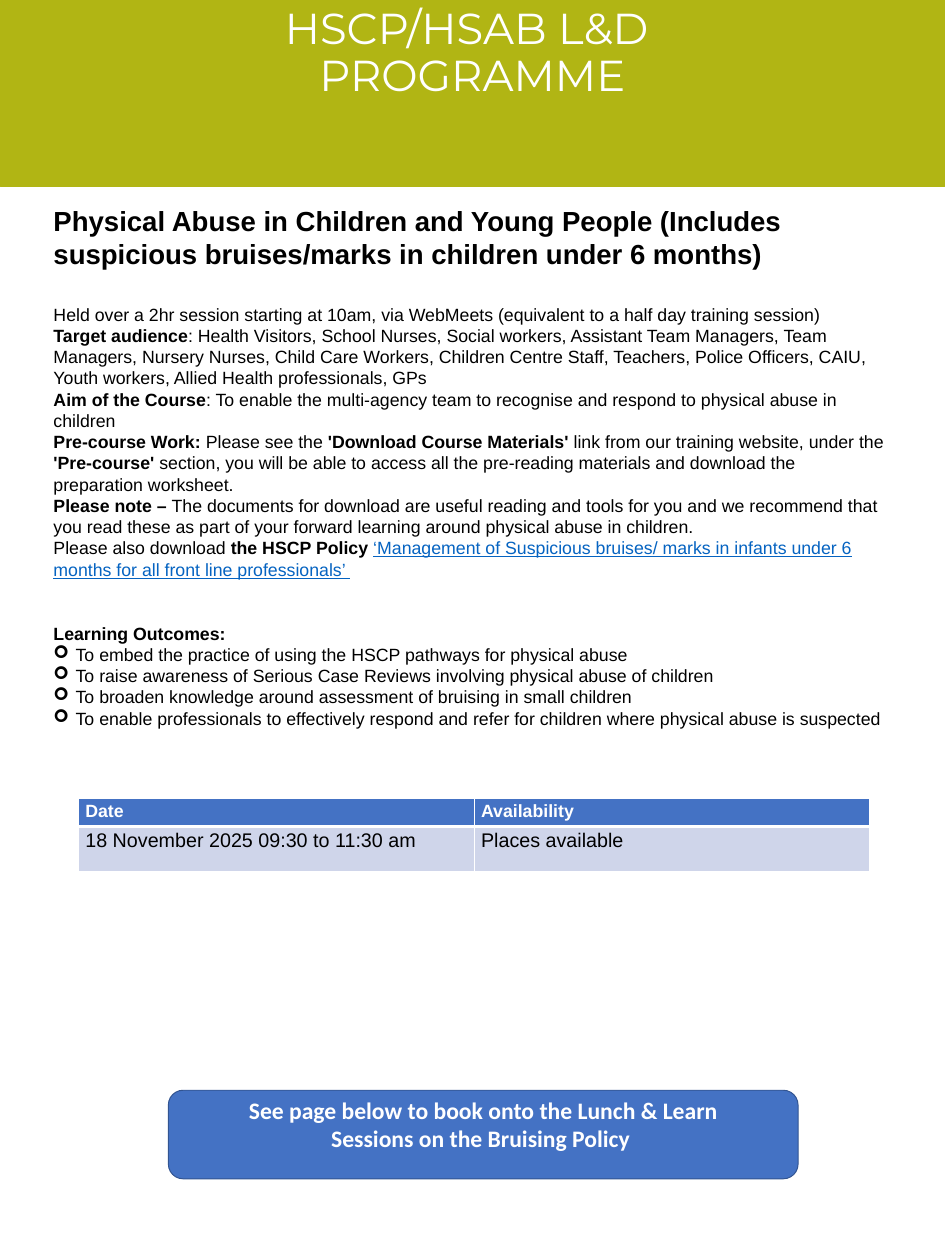
from pptx import Presentation
from pptx.util import Pt
from pptx.dml.color import RGBColor
from pptx.enum.shapes import MSO_SHAPE as Shape
from pptx.enum.text import MSO_ANCHOR as Anchor, PP_ALIGN as Align
from pptx.oxml.ns import qn
from lxml.etree import SubElement as Sub

PX = 9525
THEME = {
    "lime": "B1B514", "blue": "4472C4", "edge": "325491", "pale": "CFD5EA",
    "link": "0563C1", "white": "FFFFFF", "black": "000000",
    "title": 44, "head": 28, "call": 24, "cell": 20, "text": 18,
}
LEAD = 1.2  # line pitch of the body text, in type sizes

TITLE = "HSCP/HSAB L&D \vPROGRAMME"
HEAD = ("Physical Abuse in Children and Young People (Includes suspicious "
        "bruises/marks in children under 6 months)")
# Each paragraph is a list of (style, words): n normal, b bold, u link
BODY = [
    [("n", "Held over a 2hr session starting at 10am, via WebMeets "
           "(equivalent to a half day training session)")],
    [("b", "Target audience"),
     ("n", ": Health Visitors, School Nurses, Social workers, Assistant Team "
           "Managers, Team Managers, Nursery Nurses, Child Care Workers, "
           "Children Centre Staff, Teachers, Police Officers, CAIU, Youth "
           "workers, Allied Health professionals, GPs")],
    [("b", "Aim of the Course"),
     ("n", ": To enable the multi-agency team to recognise and respond to "
           "physical abuse in children")],
    [("b", "Pre-course Work: "), ("n", "Please see the "),
     ("b", "'Download Course Materials'"),
     ("n", " link from our training website, under the "),
     ("b", "'Pre-course'"),
     ("n", " section, you will be able to access all the pre-reading "
           "materials and download the preparation worksheet.")],
    [("b", "Please note – "),
     ("n", "The documents for download are useful reading and tools for you "
           "and we recommend that you read these as part of your forward "
           "learning around physical abuse in children.")],
    [("n", "Please also download "), ("b", "the HSCP Policy "),
     ("u", "‘Management of Suspicious bruises/ marks in infants under 6 "
           "months for all front line professionals’ ")],
]
GOALS = [
    "To embed the practice of using the HSCP pathways for physical abuse",
    "To raise awareness of Serious Case Reviews involving physical abuse of children",
    "To broaden knowledge around assessment of bruising in small children",
    "To enable professionals to effectively respond and refer for children "
    "where physical abuse is suspected",
]
DATES = [("Date", "Availability"),
         ("18 November 2025 09:30 to 11:30 am", "Places available")]
CALL = ["See page below to book onto the Lunch & Learn",
        "Sessions on the Bruising Policy "]


def emu(box):
    return [n * PX for n in box]


def tint(name):
    return RGBColor.from_string(THEME[name])


def style(font, size, color="black", face="Arial", **more):
    look = {"size": Pt(THEME[size]), "name": face, "bold": False, **more}
    for key, value in look.items():
        setattr(font, key, value)
    font.color.rgb = tint(color)


def panel(slide, box, kind, fill, edge):
    shape = slide.shapes.add_shape(kind, *emu(box))
    shape.shadow.inherit = False
    shape.fill.solid()
    shape.fill.fore_color.rgb = tint(fill)
    shape.line.color.rgb = tint(edge)
    shape.line.width = Pt(1)
    return shape


def textbox(slide, box):
    frame = slide.shapes.add_textbox(*emu(box)).text_frame
    frame.word_wrap = True
    return frame


def banner(slide, box):
    x, y, w, h = box
    panel(slide, box, Shape.RECTANGLE, "lime", "lime")
    par = textbox(slide, (x, y + 5, w, h - 36)).paragraphs[0]
    par.text = TITLE
    par.alignment = Align.CENTER
    par.line_spacing = 0.9
    style(par.font, "title", "white", "Montserrat")


def write(par, parts, size="text", gap=0):
    """Fill a paragraph with styled parts; gap is points above it."""
    par.line_spacing = Pt(THEME[size] * LEAD)
    par.space_before = Pt(gap)
    for mark, words in parts:
        run = par.add_run()
        run.text = words
        style(run.font, size, "link" if mark == "u" else "black",
              bold=mark == "b", underline=mark == "u")


def bullet(par):
    props = par._p.get_or_add_pPr()
    props.set("marL", str(30 * PX))
    props.set("indent", str(-30 * PX))
    Sub(props, qn("a:buFont"), typeface="Wingdings")
    Sub(props, qn("a:buChar"), char="➢")


def course(slide, box):
    frame = textbox(slide, box)
    write(frame.paragraphs[0], [("b", HEAD)], "head")
    for i, parts in enumerate(BODY):
        gap = 0 if i else THEME["head"] * LEAD
        write(frame.add_paragraph(), parts, gap=gap)
    write(frame.add_paragraph(), [("b", "Learning Outcomes:")],
          gap=2 * THEME["text"] * LEAD)
    for goal in GOALS:
        par = frame.add_paragraph()
        write(par, [("n", goal)])
        bullet(par)


def border(cell, low):
    """Draw white cell edges, the lower one low points wide."""
    props = cell._tc.get_or_add_tcPr()
    for side, width in zip("LRTB", (1, 1, 1, low)):
        line = Sub(props, qn("a:ln" + side), w=str(Pt(width)))
        Sub(Sub(line, qn("a:solidFill")), qn("a:srgbClr"), val=THEME["white"])


def dates(slide, box):
    table = slide.shapes.add_table(len(DATES), 2, *emu(box)).table
    looks = [(37, "blue", "text", "white", True, 3),
             (61, "pale", "cell", "black", False, 1)]
    for r, (high, fill, size, color, bold, low) in enumerate(looks):
        table.rows[r].height = high * PX
        for c, words in enumerate(DATES[r]):
            cell = table.cell(r, c)
            border(cell, low)
            cell.fill.solid()
            cell.fill.fore_color.rgb = tint(fill)
            cell.text = words
            style(cell.text_frame.paragraphs[0].runs[0].font,
                  size, color, bold=bold)


def callout(slide, box):
    shape = panel(slide, box, Shape.ROUNDED_RECTANGLE, "blue", "edge")
    frame = shape.text_frame
    frame.word_wrap = True
    frame.vertical_anchor = Anchor.MIDDLE
    frame.margin_bottom = 34 * PX
    for i, words in enumerate(CALL):
        par = frame.add_paragraph() if i else frame.paragraphs[0]
        par.text = words
        par.alignment = Align.CENTER
        style(par.runs[0].font, "call", "white", "Calibri", bold=True)


def main():
    deck = Presentation()
    deck.slide_width, deck.slide_height = emu((1280, 1707))
    slide = deck.slides.add_slide(deck.slide_layouts[6])
    banner(slide, (0, 0, 1280, 253))
    course(slide, (63, 272, 1149, 807))
    dates(slide, (106, 1081, 1072, 98))
    callout(slide, (228, 1477, 853, 120))
    deck.save("out.pptx")


if __name__ == "__main__":
    main()
